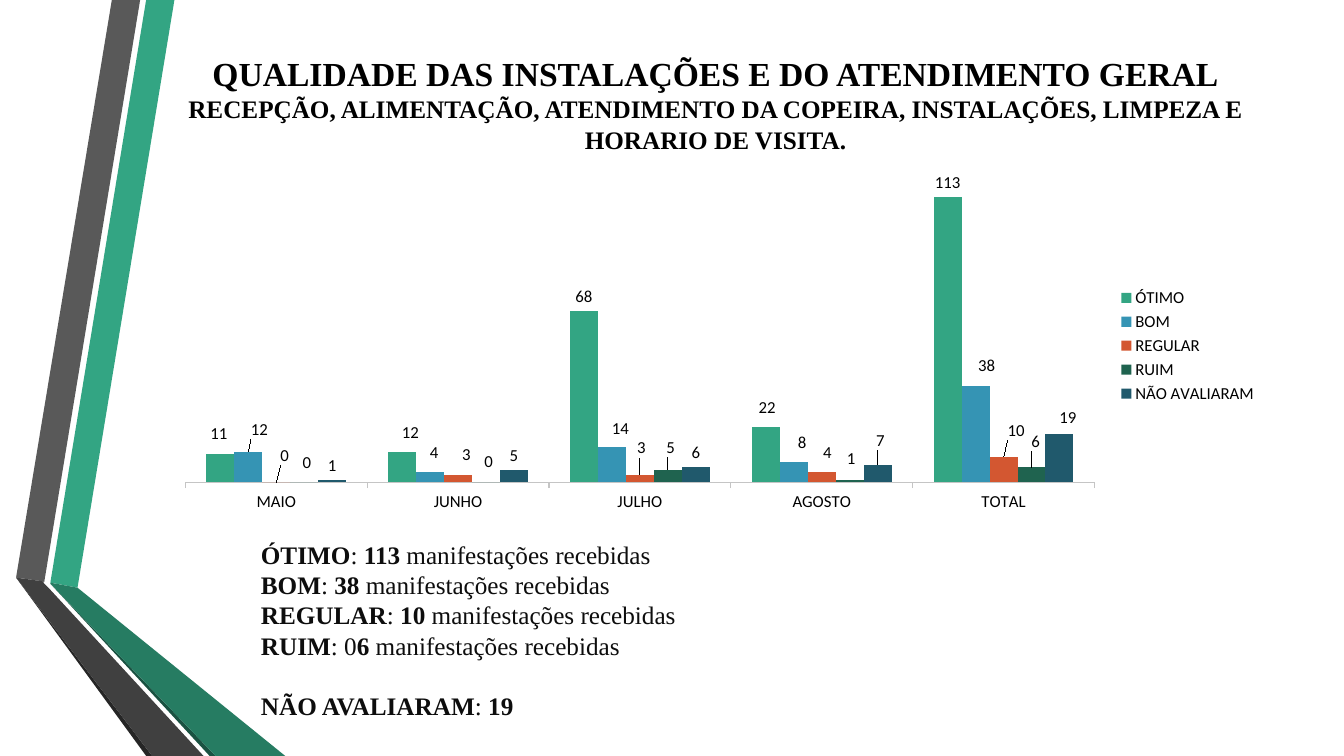
from lxml.etree import SubElement
from pptx import Presentation
from pptx.chart.data import CategoryChartData
from pptx.dml.color import RGBColor
from pptx.enum.chart import XL_CHART_TYPE, XL_LABEL_POSITION, XL_LEGEND_POSITION, XL_TICK_LABEL_POSITION, XL_TICK_MARK
from pptx.enum.text import MSO_ANCHOR, PP_ALIGN
from pptx.oxml.ns import qn
from pptx.util import Pt

SERIF, SANS = "Times New Roman", "Calibri"
BLACK, INK, AXIS_GREY = "000000", "0D0D0D", "C5C5C5"

HEADING = [
    ("QUALIDADE DAS INSTALAÇÕES E DO ATENDIMENTO GERAL", 24),
    ("RECEPÇÃO, ALIMENTAÇÃO, ATENDIMENTO DA COPEIRA, INSTALAÇÕES, LIMPEZA E HORARIO DE VISITA.", 18),
]
# rating, separator, count, ending, space before
SUMMARY = [
    ("ÓTIMO", ": ", "113", " manifestações recebidas", 0),
    ("BOM", ": ", "38", " manifestações recebidas", 0),
    ("REGULAR", ": ", "10", " manifestações recebidas", 0),
    ("RUIM", ": 0", "6", " manifestações recebidas", 0),
    ("NÃO AVALIARAM", ": ", "19", "", 21.5),
]
MONTHS = ["MAIO", "JUNHO", "JULHO", "AGOSTO", "TOTAL"]
# rating, colour, values, label shifts in points by month index
RATINGS = [
    ("ÓTIMO", "33A583", (11, 12, 68, 22, 113), {0: (-1, -5), 1: (6, -4), 3: (1, -4)}),
    ("BOM", "3594B4", (12, 4, 14, 8, 38),
     {0: (8, -6), 1: (3, -4), 2: (6, -3), 3: (6, -4), 4: (8, -5)}),
    ("REGULAR", "D35731", (0, 3, 3, 4, 10),
     {0: (6, -9), 1: (6, -4), 2: (1, -9), 3: (4, -4), 4: (9, -9)}),
    ("RUIM", "1F634F", (0, 0, 5, 1, 6),
     {0: (2, -4), 1: (2, -5), 2: (2, -6), 3: (1, -5), 4: (3, -8)}),
    ("NÃO AVALIARAM", "20596C", (1, 5, 6, 7, 19), {3: (2, -7), 4: (6, -2)}),
]
RIBBONS = [
    ("33A583", [(36, 416.2), (55.4, 419.8), (124.6, 0), (104.4, 0)]),
    ("595959", [(100.1, 0), (79.9, 0), (11.5, 412.6), (31.7, 415.4)]),
    ("262626", [(11.5, 412.6), (104.4, 540), (108.7, 540)]),
    ("1A5242", [(36, 416.9), (149.8, 540), (154.1, 540)]),
    ("267C62", [(36, 416.2), (36, 416.9), (154.1, 540), (203.8, 540), (55.4, 419.8)]),
    ("404040", [(145.4, 540), (34.6, 419.8), (31, 416.2), (31.7, 415.4), (11.5, 412.6), (108.7, 540)]),
]
CHART_LEFT, CHART_TOP, CHART_WIDTH, CHART_HEIGHT = 116.6, 123.1, 789.1, 247.7


def color(hex_code):
    return RGBColor.from_string(hex_code)


def style(font, size, name, hex_code, bold=False):
    font.size, font.name, font.bold = Pt(size), name, bold
    font.color.rgb = color(hex_code)


def add_run(paragraph, text, *, size=18, name=SERIF, hex_code=INK, bold=False):
    run = paragraph.add_run()
    run.text = text
    style(run.font, size, name, hex_code, bold)


def add_frame(slide, left, top, width, height, anchor):
    box = slide.shapes.add_textbox(Pt(left), Pt(top), Pt(width), Pt(height))
    frame = box.text_frame
    frame.word_wrap = True
    frame.vertical_anchor = anchor
    return frame


def next_paragraph(frame, index):
    return frame.add_paragraph() if index else frame.paragraphs[0]


def add_ribbon(slide, hex_code, corners):
    points = [(Pt(x), Pt(y)) for x, y in corners]
    builder = slide.shapes.build_freeform(*points[0], scale=1.0)
    builder.add_line_segments(points[1:], close=True)
    ribbon = builder.convert_to_shape()
    ribbon.shadow.inherit = False
    ribbon.fill.solid()
    ribbon.fill.fore_color.rgb = color(hex_code)
    ribbon.line.fill.background()


def manual_layout(parent, position, **settings):
    """Put a manual chart layout at the given child position, replacing any other."""
    for old in parent.findall(qn("c:layout")):
        parent.remove(old)
    layout = SubElement(parent, qn("c:layout"))
    parent.insert(position, layout)
    manual = SubElement(layout, qn("c:manualLayout"))
    for tag, value in settings.items():
        SubElement(manual, qn(f"c:{tag}")).set("val", str(value))


def format_series(series, hex_code, shifts):
    series.format.fill.solid()
    series.format.fill.fore_color.rgb = color(hex_code)
    series.invert_if_negative = False
    labels = series.data_labels
    labels.show_value = True
    labels.position = XL_LABEL_POSITION.OUTSIDE_END
    style(labels.font, 12, SANS, BLACK)
    for month in shifts:
        label = series.points[month].data_label
        label.position = XL_LABEL_POSITION.OUTSIDE_END
        style(label.font, 12, SANS, BLACK)
    label_nodes = series._element.findall(f"{qn('c:dLbls')}/{qn('c:dLbl')}")
    for node, month in zip(label_nodes, sorted(shifts)):
        dx, dy = shifts[month]
        manual_layout(node, 1, x=round(dx / CHART_WIDTH, 4), y=round(dy / CHART_HEIGHT, 4))


def add_ratings_chart(slide):
    data = CategoryChartData()
    data.categories = MONTHS
    for rating, _, values, _ in RATINGS:
        data.add_series(rating, values)
    chart = slide.shapes.add_chart(
        XL_CHART_TYPE.COLUMN_CLUSTERED, Pt(CHART_LEFT), Pt(CHART_TOP),
        Pt(CHART_WIDTH), Pt(CHART_HEIGHT), data).chart
    style(chart.font, 12, SANS, BLACK)
    chart.has_title = False
    chart.has_legend = True
    chart.legend.position = XL_LEGEND_POSITION.RIGHT
    chart.legend.include_in_layout = False
    style(chart.legend.font, 12, SANS, BLACK)

    plot = chart.plots[0]
    plot.vary_by_categories = False
    plot.gap_width, plot.overlap = 150, 0
    for series, (_, hex_code, _, shifts) in zip(plot.series, RATINGS):
        format_series(series, hex_code, shifts)

    months_axis, count_axis = chart.category_axis, chart.value_axis
    months_axis.major_tick_mark = XL_TICK_MARK.OUTSIDE
    months_axis.tick_label_position = XL_TICK_LABEL_POSITION.LOW
    months_axis.format.line.color.rgb = color(AXIS_GREY)
    months_axis.format.line.width = Pt(0.75)
    style(months_axis.tick_labels.font, 12, SANS, BLACK)
    count_axis.minimum_scale, count_axis.maximum_scale = 0, 120
    count_axis.has_major_gridlines = False
    count_axis.visible = False
    plot_area = chart._chartSpace.find(f"{qn('c:chart')}/{qn('c:plotArea')}")
    manual_layout(plot_area, 0, layoutTarget="inner", xMode="edge", yMode="edge",
                  x=0.02, y=0.02, w=0.823, h=0.874)


def main():
    deck = Presentation()
    deck.slide_width, deck.slide_height = Pt(960), Pt(540)
    slide = deck.slides.add_slide(deck.slide_layouts[6])
    for hex_code, corners in RIBBONS:
        add_ribbon(slide, hex_code, corners)

    heading = add_frame(slide, 116.6, 7.2, 789.1, 133.9, MSO_ANCHOR.MIDDLE)
    for index, (text, size) in enumerate(HEADING):
        paragraph = next_paragraph(heading, index)
        paragraph.alignment = PP_ALIGN.CENTER
        add_run(paragraph, text, size=size, hex_code=BLACK, bold=True)

    summary = add_frame(slide, 179.3, 381.6, 726.5, 138.2, MSO_ANCHOR.TOP)
    for index, (*parts, gap) in enumerate(SUMMARY):
        paragraph = next_paragraph(summary, index)
        paragraph.space_before = Pt(gap)
        for place, text in enumerate(parts):
            if text:
                add_run(paragraph, text, bold=place % 2 == 0)

    add_ratings_chart(slide)
    deck.save("out.pptx")


if __name__ == "__main__":
    main()
